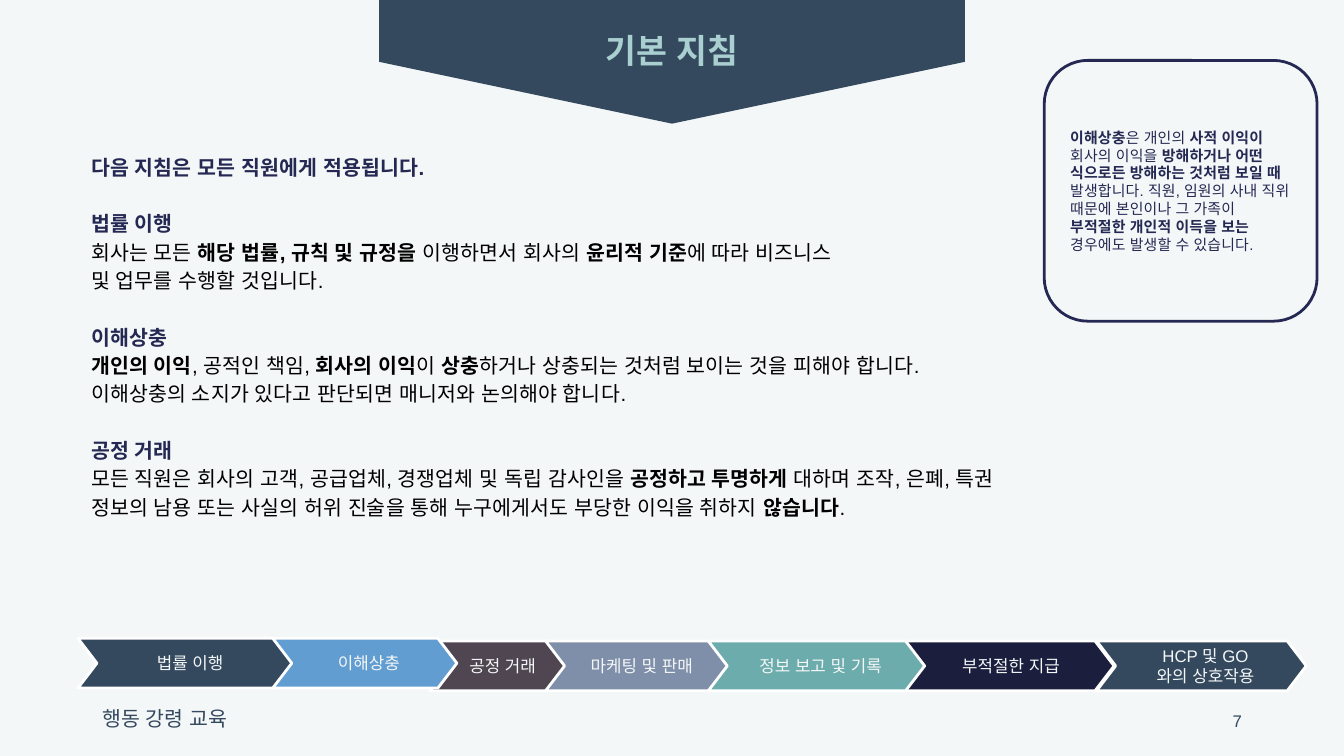
"""Build the basic guidelines slide of a code of conduct course."""
import lxml.etree
import pptx
import pptx.dml.color
import pptx.enum.shapes
import pptx.enum.text
import pptx.oxml.ns
import pptx.util

SHAPE = pptx.enum.shapes.MSO_SHAPE
ALIGN = pptx.enum.text.PP_ALIGN
ANCHOR = pptx.enum.text.MSO_ANCHOR
Inches, Pt = pptx.util.Inches, pptx.util.Pt

COLORS = {
    "background": "F4F7F7", "slate": "34495E", "mint": "AACFD0", "navy": "242852",
    "black": "000000", "white": "FFFFFF", "blue": "629DD1", "brown": "4F4651",
    "steel": "7F8FA9", "teal": "6DACAC", "midnight": "1B1E3D",
}
W = 10
H = W * 9 / 16
TITLE = "기본 지침"
FOOTER = "행동 강령 교육"
PAGE = "7"
INTRO = "**다음 지침은 모든 직원에게 적용됩니다.**"
GUIDELINES = [
    ("**법률 이행**",
     "회사는 모든 **해당 법률, 규칙 및 규정을** 이행하면서 회사의 **윤리적 기준**에 따라 비즈니스 \n"
     "및 업무를 수행할 것입니다."),
    ("**이해상충**",
     "**개인의 이익**, 공적인 책임, **회사의 이익**이 **상충**하거나 상충되는 것처럼 보이는 것을 "
     "피해야 합니다. 이해상충의 소지가 있다고 판단되면 매니저와 논의해야 합니다."),
    ("**공정 거래**",
     "모든 직원은 회사의 고객, 공급업체, 경쟁업체 및 독립 감사인을 **공정하고 투명하게 **대하며 조작, 은폐, "
     "특권 정보의 남용 또는 사실의 허위 진술을 통해 누구에게서도 부당한 이익을 취하지 **않습니다**."),
]
DEFINITION = (
    "**이해상충**은 개인의** 사적 이익이** 회사의 이익을 **방해하거나 어떤 식으로든 방해하는 것처럼 보일 때 **"
    "발생합니다. 직원, 임원의 사내 직위 때문에 본인이나 그 가족이** 부적절한 개인적 이득을 보는** "
    "경우에도 발생할 수 있습니다.")
STEPS = [
    ("공정 거래", 3.2, 4.77, 1.02, "brown"),
    ("부적절한 지급 ", 6.73, 4.77, 1.56, "midnight"),
    ("마케팅 및 판매", 4.06, 4.77, 1.37, "steel"),
    ("정보 보고 및 기록", 5.27, 4.77, 1.61, "teal"),
    ("법률 이행", 0.58, 4.75, 1.61, "slate"),
    ("이해상충", 2.03, 4.75, 1.37, "blue"),
    ("HCP 및 GO\n와의 상호작용", 8.16, 4.77, 1.56, "slate"),
]
STEP_HEIGHT = 0.37


def rgb(name):
    return pptx.dml.color.RGBColor.from_string(COLORS[name])


def set_frame(sp, insets, anchor=ANCHOR.TOP):
    tf = sp.text_frame
    tf.word_wrap = True
    tf.vertical_anchor = anchor
    tf.margin_left, tf.margin_top, tf.margin_right, tf.margin_bottom = map(Inches, insets)
    return tf


def style_run(r, size, color, bold=False, font="Arial"):
    r.font.size, r.font.name, r.font.bold = Pt(size), font, bold
    r.font.color.rgb = rgb(color)
    latin = r.font._element.find(pptx.oxml.ns.qn("a:latin"))
    east_asian = lxml.etree.Element(pptx.oxml.ns.qn("a:ea"), typeface="Arial")
    latin.addnext(east_asian)


def style(p, size, color, align=ALIGN.LEFT, **look):
    p.alignment = align
    for r in p.runs:
        style_run(r, size, color, **look)


def write_marked(p, text, size, color):
    p.alignment = ALIGN.LEFT
    for i, part in enumerate(text.split("**")):
        for j, line in enumerate(part.split("\n")):
            if j:
                p.add_line_break()
            if line:
                r = p.add_run()
                r.text = line
                style_run(r, size, color, bold=i % 2 == 1)


def add_label(s, text, box, size, color, anchor=ANCHOR.TOP, **look):
    sp = s.shapes.add_textbox(*map(Inches, box))
    tf = set_frame(sp, (0.07, 0.04, 0.07, 0.04), anchor)
    tf.text = text
    style(tf.paragraphs[0], size, color, **look)


def add_block(s, kind, box, adj, fill=None, line=None):
    sp = s.shapes.add_shape(kind, *map(Inches, box))
    sp.shadow.inherit = False
    sp.adjustments[0] = adj
    if fill:
        sp.fill.solid()
        sp.fill.fore_color.rgb = rgb(fill)
    else:
        sp.fill.background()
    if line:
        sp.line.color.rgb = rgb(line)
        sp.line.width = Pt(1.5)
    else:
        sp.line.fill.background()
    return sp


def add_guidelines(s):
    sp = s.shapes.add_textbox(*map(Inches, (0.58, 1.07, 7.02, 3.52)))
    tf = set_frame(sp, (0.1,) * 4)
    p = tf.paragraphs[0]
    p.line_spacing = 0.9
    write_marked(p, INTRO, 11, "navy")
    for heading, body in GUIDELINES:
        for text, color, gap in ((heading, "navy", 15.2), (body, "black", 0)):
            p = tf.add_paragraph()
            p.line_spacing, p.space_before = 1.15, Pt(gap)
            write_marked(p, text, 11, color)


def main():
    prs = pptx.Presentation()
    prs.slide_width, prs.slide_height = Inches(W), Inches(H)
    s = prs.slides.add_slide(prs.slide_layouts[6])
    s.background.fill.solid()
    s.background.fill.fore_color.rgb = rgb("background")

    add_label(s, FOOTER, (0.69, 5.21, 2.4, 0.25), 11, "slate", font="Noto Sans CJK KR")
    banner = add_block(s, SHAPE.PENTAGON, (4.54, -1.72, 0.92, 4.36), 0.5, "slate")
    banner.rotation = 90
    add_label(s, TITLE, (2.23, 0.18, 5.54, 0.38), 18, "mint", bold=True, align=ALIGN.CENTER)
    add_label(s, PAGE, (7.06, 5.21, 2.25, 0.3), 9, "slate", ANCHOR.MIDDLE, align=ALIGN.RIGHT)
    add_guidelines(s)

    note = add_block(s, SHAPE.ROUNDED_RECTANGLE, (7.77, 0.45, 2.03, 1.94), 0.167, line="navy")
    tf = set_frame(note, (0.1,) * 4, ANCHOR.MIDDLE)
    write_marked(tf.paragraphs[0], DEFINITION, 8, "navy")

    for text, left, top, width, fill in STEPS:
        step = add_block(s, SHAPE.CHEVRON, (left, top, width, STEP_HEIGHT), 0.382, fill, "white")
        tf = set_frame(step, (0.06, 0, 0, 0), ANCHOR.MIDDLE)
        tf.text = text
        for p in tf.paragraphs:
            style(p, 9, "background", align=ALIGN.CENTER)

    prs.save("out.pptx")


if __name__ == "__main__":
    main()
